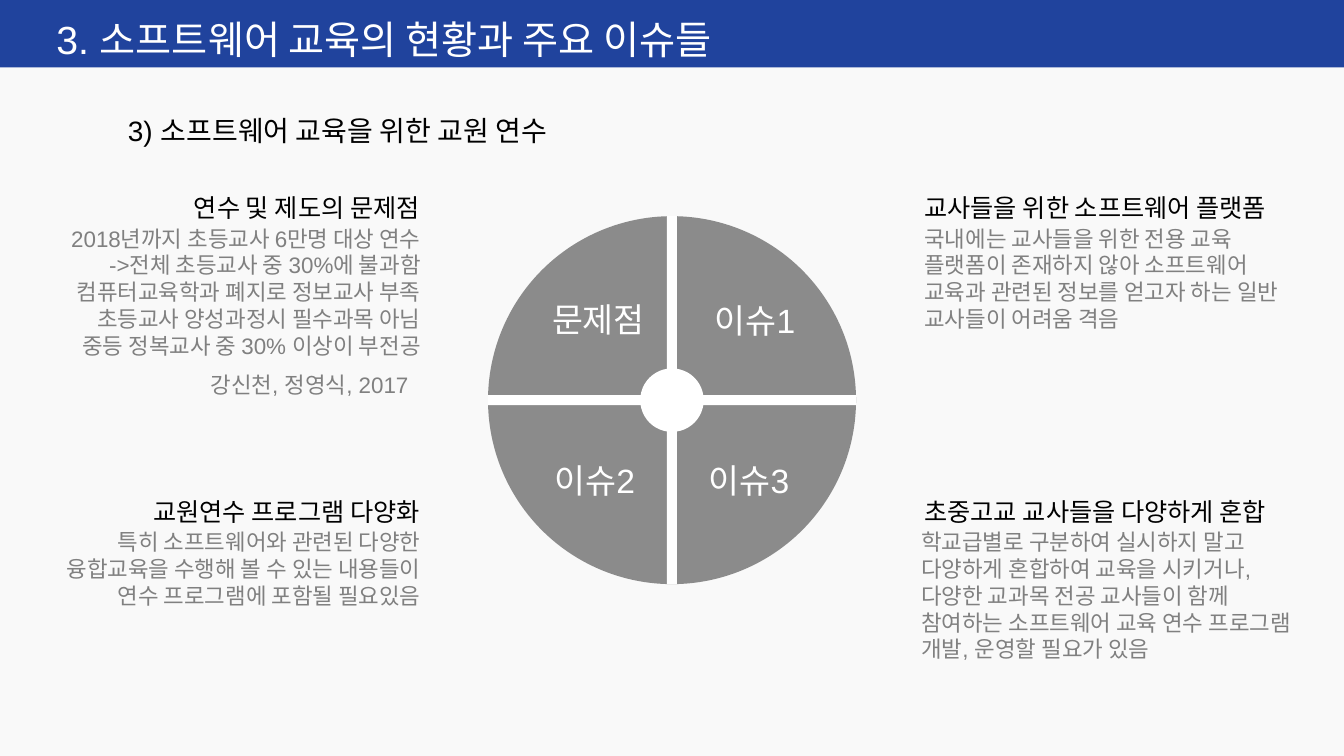
import pptx
import pptx.util
import pptx.dml.color
import pptx.enum.shapes
import pptx.enum.text
import pptx.oxml
import pptx.oxml.ns
from lxml import etree

SLIDE_WIDTH, SLIDE_HEIGHT = 13.33, 7.5
FONT = "Arial"
COLOURS = {"background": "F9F9F9", "bar": "20439D", "white": "FFFFFF",
           "black": "000000", "grey": "808080"}

TITLE = "3. 소프트웨어 교육의 현황과 주요 이슈들"
SUBTITLE = "3) 소프트웨어 교육을 위한 교원 연수"
CITATION = "강신천, 정영식, 2017"

# (column, row, heading, heading width, body left, body width, body lines)
BLOCKS = [
    ("right", 0, "교사들을 위한 소프트웨어 플랫폼", 3.95, 9.07, 4.11,
     ["국내에는 교사들을 위한 전용 교육", "플랫폼이 존재하지 않아 소프트웨어",
      "교육과 관련된 정보를 얻고자 하는 일반", "교사들이 어려움 격음"]),
    ("right", 1, "초중고교 교사들을 다양하게 혼합", 3.95, 9.04, 4.27,
     ["학교급별로 구분하여 실시하지 말고", "다양하게 혼합하여 교육을 시키거나,",
      "다양한 교과목 전공 교사들이 함께",
      "참여하는 소프트웨어 교육 연수 프로그램", "개발, 운영할 필요가 있음"]),
    ("left", 0, "연수 및 제도의 문제점", 2.68, 0.28, 3.99,
     ["2018년까지 초등교사 6만명 대상 연수", "->전체 초등교사 중 30%에 불과함",
      "컴퓨터교육학과 폐지로 정보교사 부족", "초등교사 양성과정시 필수과목 아님",
      "중등 정복교사 중 30% 이상이 부전공"]),
    ("left", 1, "교원연수 프로그램 다양화", 3.12, 0.16, 4.11,
     ["특히 소프트웨어와 관련된 다양한", "융합교육을 수행해 볼 수 있는 내용들이",
      "연수 프로그램에 포함될 필요있음"]),
]
# (text, left, top, width)
WHEEL_LABELS = [("이슈3", 6.9, 4.51, 1.06), ("이슈1", 6.96, 2.93, 1.06),
                ("이슈2", 5.37, 4.51, 1.06), ("문제점", 5.33, 2.92, 1.21)]

ROW_TOPS = [1.86, 4.87]
LEFT_COLUMN_END, RIGHT_COLUMN_START = 4.26, 9.07
BODY_OFFSET = 0.32
HEADING_HEIGHT, LINE_HEIGHT, INSETS = 0.4, 0.27, 0.1
WHEEL_X, WHEEL_Y = SLIDE_WIDTH / 2, 3.97
WHEEL_SIZE, HUB_SIZE, GAP = 3.65, 0.63, 0.1
BAR_HEIGHT = 0.67

SHAPES = pptx.enum.shapes.MSO_SHAPE
ALIGN = pptx.enum.text.PP_ALIGN


def colour(name):
    return pptx.dml.color.RGBColor.from_string(COLOURS[name])


def place(shape, left, top, width, height):
    shape.left, shape.top, shape.width, shape.height = (
        pptx.util.Inches(length) for length in (left, top, width, height))


def write(shape, lines, size, colour_name, align=ALIGN.LEFT):
    frame = shape.text_frame
    frame.word_wrap = True
    frame.auto_size = pptx.enum.text.MSO_AUTO_SIZE.SHAPE_TO_FIT_TEXT
    frame.vertical_anchor = pptx.enum.text.MSO_ANCHOR.TOP
    for index, line in enumerate(lines):
        paragraph = frame.add_paragraph() if index else frame.paragraphs[0]
        paragraph.alignment = align
        run = paragraph.add_run()
        run.text = line
        run.font.name = FONT
        run.font.size = pptx.util.Pt(size)
        run.font.color.rgb = colour(colour_name)


def add_text(slide, box, lines, size, colour_name, align=ALIGN.LEFT):
    shape = slide.shapes.add_textbox(*map(pptx.util.Inches, box))
    write(shape, lines, size, colour_name, align)


def add_plain_shape(slide, kind, box, colour_name):
    shape = slide.shapes.add_shape(kind, *map(pptx.util.Inches, box))
    shape.shadow.inherit = False
    shape.fill.solid()
    shape.fill.fore_color.rgb = colour(colour_name)
    shape.line.fill.background()
    return shape


def wheel_box(width, height):
    """Box of the given size around the middle of the wheel."""
    return WHEEL_X - width / 2, WHEEL_Y - height / 2, width, height


def add_block(slide, column, row, heading, heading_width, left, width, lines):
    top = ROW_TOPS[row]
    if column == "left":
        heading_left, align = LEFT_COLUMN_END - heading_width, ALIGN.RIGHT
    else:
        heading_left, align = RIGHT_COLUMN_START, ALIGN.LEFT
    add_text(slide, (heading_left, top, heading_width, HEADING_HEIGHT),
             [heading], 18, "black", align)
    body_height = LINE_HEIGHT * len(lines) + INSETS
    add_text(slide, (left, top + BODY_OFFSET, width, body_height),
             lines, 16, "grey", align)


def add_wheel(slide):
    disc = add_plain_shape(slide, SHAPES.OVAL,
                           wheel_box(WHEEL_SIZE, WHEEL_SIZE), "grey")
    fill_colour = disc.element.find(".//" + pptx.oxml.ns.qn("a:srgbClr"))
    etree.SubElement(fill_colour, pptx.oxml.ns.qn("a:alpha"), val="90000")
    for width, height in ((GAP, WHEEL_SIZE), (WHEEL_SIZE, GAP)):
        add_plain_shape(slide, SHAPES.RECTANGLE, wheel_box(width, height), "white")
    for text, left, top, width in WHEEL_LABELS:
        add_text(slide, (left, top, width, 0.5), [text], 24, "white", ALIGN.CENTER)
    add_plain_shape(slide, SHAPES.OVAL, wheel_box(HUB_SIZE, HUB_SIZE), "white")


def main():
    presentation = pptx.Presentation()
    presentation.slide_width = pptx.util.Inches(SLIDE_WIDTH)
    presentation.slide_height = pptx.util.Inches(SLIDE_HEIGHT)
    slide = presentation.slides.add_slide(presentation.slide_layouts[5])
    slide.background.fill.solid()
    slide.background.fill.fore_color.rgb = colour("background")

    title = slide.shapes.title
    place(title, 0.46, 0.1, 7.36, 0.57)
    write(title, [TITLE], 28, "white")
    bar = add_plain_shape(slide, SHAPES.RECTANGLE,
                          (0, 0, SLIDE_WIDTH, BAR_HEIGHT), "bar")
    title.element.addprevious(bar.element)

    for block in BLOCKS:
        add_block(slide, *block)
    add_wheel(slide)
    add_text(slide, (1.17, 1.08, 4.76, 0.44), [SUBTITLE], 20, "black")
    add_text(slide, (1.92, 3.63, 2.3, 0.37), [CITATION], 16, "grey", ALIGN.CENTER)
    presentation.save("out.pptx")


if __name__ == "__main__":
    main()
